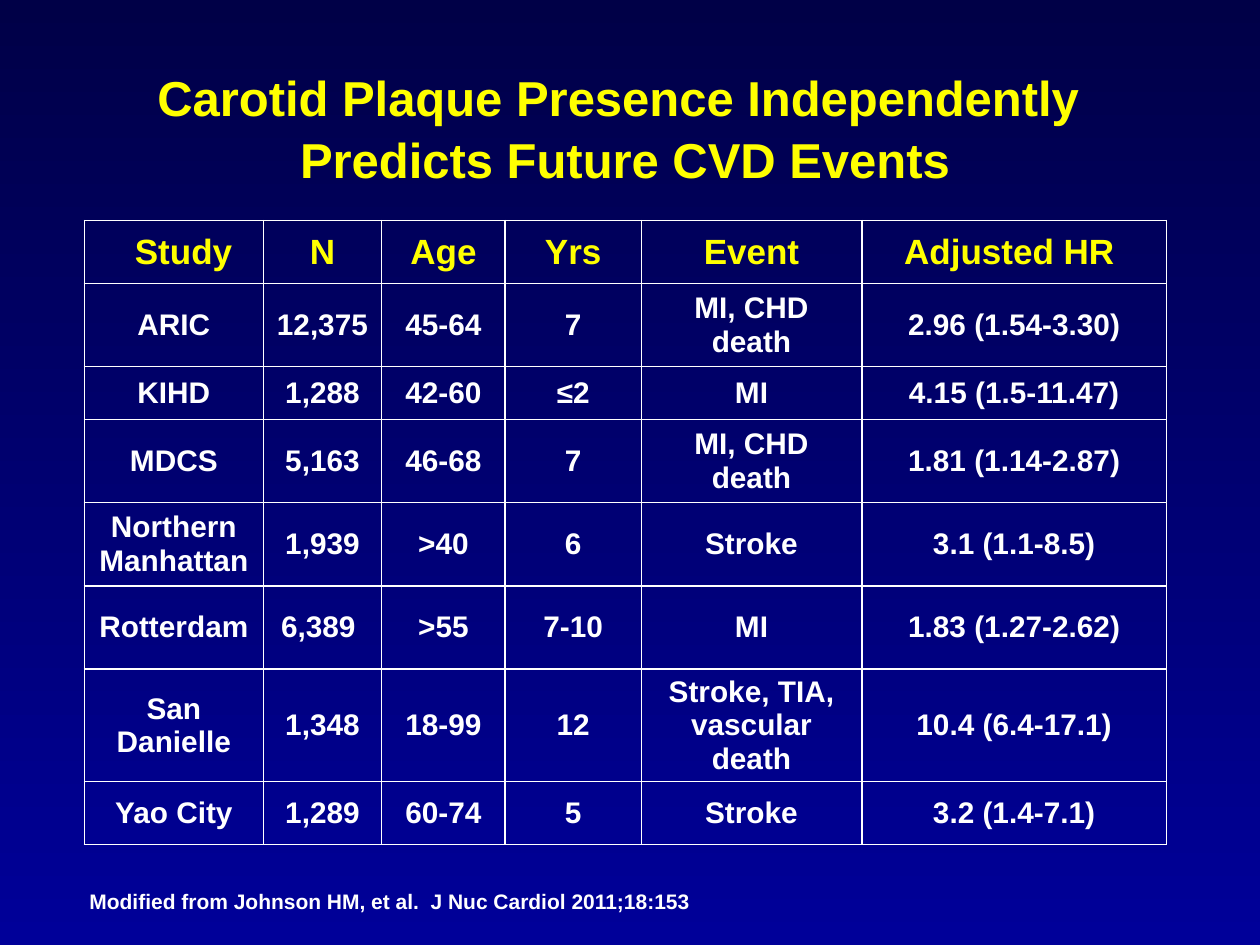
"""Build a slide that tabulates studies of carotid plaque and CVD events."""
import pptx
import pptx.chart.data
import pptx.dml.color
import pptx.enum.text
import pptx.oxml
import pptx.oxml.ns
import pptx.util

Inches = pptx.util.Inches
Pt = pptx.util.Pt
RGBColor = pptx.dml.color.RGBColor
CENTER = pptx.enum.text.PP_ALIGN.CENTER
MIDDLE = pptx.enum.text.MSO_ANCHOR.MIDDLE

NIGHT = RGBColor(0x00, 0x00, 0x47)
NAVY = RGBColor(0x00, 0x00, 0x99)
YELLOW = RGBColor(0xFF, 0xFF, 0x00)
WHITE = RGBColor(0xFF, 0xFF, 0xFF)

TITLE = "Carotid Plaque Presence Independently \vPredicts Future CVD Events"
SOURCE = "Modified from Johnson HM, et al.  J Nuc Cardiol 2011;18:153"
WIDTHS = [1.42, 0.94, 0.98, 1.08, 1.75, 2.42]
HEIGHTS = [0.5, 0.66, 0.42, 0.66, 0.66, 0.66, 0.89, 0.5]
ROWS = [
    ["  Study", "N", "Age", "Yrs", "Event", "Adjusted HR "],
    ["ARIC", "12,375", "45-64", "7", "MI, CHD death", "2.96 (1.54-3.30)"],
    ["KIHD", "1,288", "42-60", "≤2", "MI", "4.15 (1.5-11.47)"],
    ["MDCS", "5,163", "46-68", "7", "MI, CHD death", "1.81 (1.14-2.87)"],
    ["Northern Manhattan", "1,939", ">40", "6", "Stroke", "3.1 (1.1-8.5)"],
    ["Rotterdam", "6,389 ", ">55", "7-10", "MI", "1.83 (1.27-2.62)"],
    ["San Danielle", "1,348", "18-99", "12", "Stroke, TIA, vascular death",
     "10.4 (6.4-17.1)"],
    ["Yao City", "1,289", "60-74", "5", "Stroke", "3.2 (1.4-7.1)"],
]


def set_text(frame, text, size, color, align=None):
    """Write one bold paragraph into a text frame."""
    frame.text = text
    frame.word_wrap = True
    para = frame.paragraphs[0]
    para.alignment = align
    para.font.name = "Arial"
    para.font.size = Pt(size)
    para.font.bold = True
    para.font.color.rgb = color
    return para


def paint_back(slide):
    """Fill the slide with a gradient that runs from top to bottom."""
    fill = slide.background.fill
    fill.gradient()
    fill.gradient_angle = 270
    for stop, color in zip(fill.gradient_stops, (NIGHT, NAVY)):
        stop.color.rgb = color


def add_title(slide):
    """Place and format the title."""
    title = slide.shapes.title
    title.left, title.top = Inches(0.25), Inches(0.42)
    title.width, title.height = Inches(9.42), Inches(1.17)
    title.text_frame.vertical_anchor = MIDDLE
    para = set_text(title.text_frame, TITLE, 28, YELLOW, CENTER)
    para.line_spacing = 1.05


def add_border(cell):
    """Draw a thin white line on each side of a cell."""
    props = cell._tc.get_or_add_tcPr()
    for spot, side in enumerate(("lnL", "lnR", "lnT", "lnB")):
        line = pptx.oxml.parse_xml(
            f'<a:{side} {pptx.oxml.ns.nsdecls("a")} w="{Pt(1)}"><a:solidFill>'
            f'<a:srgbClr val="{WHITE}"/></a:solidFill></a:{side}>')
        props.insert(spot, line)


def add_grid(slide):
    """Add the table of studies."""
    frame = slide.shapes.add_table(
        len(ROWS), len(WIDTHS), Inches(0.67), Inches(1.75),
        Inches(sum(WIDTHS)), Inches(sum(HEIGHTS)))
    table = frame.table
    table.first_row = table.horz_banding = False
    for column, width in zip(table.columns, WIDTHS):
        column.width = Inches(width)
    for row, height, texts in zip(table.rows, HEIGHTS, ROWS):
        row.height = Inches(height)
        size, color = (20, YELLOW) if texts is ROWS[0] else (17, WHITE)
        for cell, text in zip(row.cells, texts):
            set_text(cell.text_frame, text, size, color, CENTER)
            cell.vertical_anchor = MIDDLE
            cell.margin_left = cell.margin_right = Inches(0.09)
            cell.margin_top = cell.margin_bottom = Inches(0.05)
            cell.fill.background()
            add_border(cell)


def add_source(slide):
    """Add the citation below the table."""
    box = slide.shapes.add_textbox(
        Inches(0.71), Inches(7.05), Inches(8.71), Inches(0.2))
    frame = box.text_frame
    frame.margin_left = frame.margin_right = 0
    frame.margin_top = frame.margin_bottom = 0
    frame.vertical_anchor = MIDDLE
    frame.auto_size = pptx.enum.text.MSO_AUTO_SIZE.SHAPE_TO_FIT_TEXT
    set_text(frame, SOURCE, 12, WHITE)


def main():
    """Build and save the slide."""
    deck = pptx.Presentation()
    deck.slide_width, deck.slide_height = Inches(10), Inches(7.5)
    slide = deck.slides.add_slide(deck.slide_layouts[5])
    paint_back(slide)
    add_title(slide)
    add_grid(slide)
    add_source(slide)
    deck.save("out.pptx")


if __name__ == "__main__":
    main()
